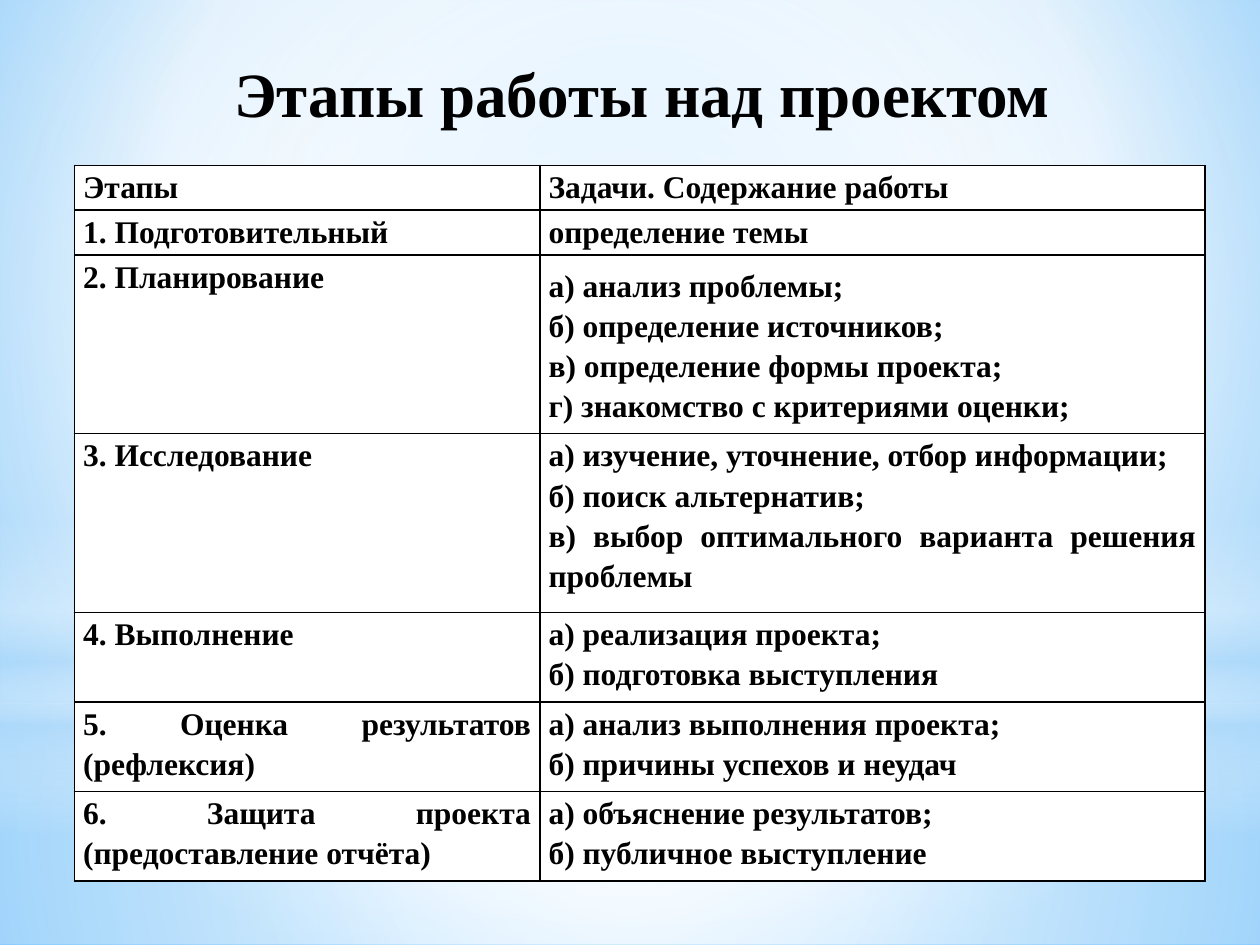
"""Build a slide with a table of project stages on a soft blue backdrop."""
from pptx import Presentation
from pptx.dml.color import RGBColor
from pptx.enum.shapes import MSO_SHAPE
from pptx.enum.text import MSO_ANCHOR, PP_ALIGN
from pptx.oxml import parse_xml
from pptx.oxml.ns import nsdecls, qn
from pptx.util import Pt

RECT, OVAL = MSO_SHAPE.RECTANGLE, MSO_SHAPE.OVAL
TOP, MIDDLE = MSO_ANCHOR.TOP, MSO_ANCHOR.MIDDLE
CENTER, JUSTIFY = PP_ALIGN.CENTER, PP_ALIGN.JUSTIFY

THEME = {
    "font": "Times New Roman", "ink": "000000", "paper": "FFFFFF",
    "haze": "B4DCFA", "sky": "9ED5FF", "deep": "5BB9FF",
    "title": 36, "body": 18, "rule": 1,
}
PAPER, HAZE = THEME["paper"], THEME["haze"]

TITLE = "Этапы работы над проектом"
STAGES = [
    ("Этапы", ["Задачи. Содержание работы"]),
    ("1. Подготовительный", ["определение темы"]),
    ("2. Планирование", [
        "а) анализ проблемы;",
        "б) определение источников;",
        "в) определение формы проекта;",
        "г) знакомство с критериями оценки;"]),
    ("3. Исследование", [
        "а) изучение, уточнение, отбор информации;",
        "б) поиск альтернатив;",
        "в) выбор оптимального варианта решения проблемы"]),
    ("4. Выполнение", ["а) реализация проекта;", "б) подготовка выступления"]),
    ("5. Оценка результатов (рефлексия)", [
        "а) анализ выполнения проекта;", "б) причины успехов и неудач"]),
    ("6. Защита проекта (предоставление отчёта)", [
        "а) объяснение результатов;", "б) публичное выступление"]),
]
LINES = [1, 1, 4, 4, 2, 2, 2]
CENTRED = (2, 1)

WIDE, HIGH = 720, 540
LEFT, HEAD = 42.5, 94.5
COLS = [266, 380]
LINE = 25.56
INSET = 5

ROUND = '<a:path path="circle"><a:fillToRect l="{}000" t="{}000" r="{}000" b="{}000"/></a:path>'
MID = ROUND.format(50, 50, 50, 50)
DOWN = '<a:lin ang="5400000" scaled="0"/>'
SKY = [(0, THEME["sky"], 100), (60, PAPER, 100), (100, THEME["deep"], 100)]
GLOWS = [
    (RECT, 402, 138, [(0, PAPER, 91), (37, PAPER, 76), (100, HAZE, 79)], MID),
    (RECT, 0, 402, [(0, PAPER, 89), (48, PAPER, 62), (100, HAZE, 79)], MID),
    (RECT, 297, 180, [(0, PAPER, 0), (29, PAPER, 30), (45, HAZE, 40),
                      (55, PAPER, 26), (65, HAZE, 60), (100, PAPER, 0)], DOWN),
    (OVAL, 126, 402, [(0, PAPER, 100), (56, PAPER, 0)], MID),
]


def blend(fill, root, stops, shade):
    fill.gradient()
    old = root.find(".//" + qn("a:gradFill"))
    marks = "".join(
        f'<a:gs pos="{pos}000"><a:srgbClr val="{tone}"><a:alpha val="{alpha}000"/>'
        f"</a:srgbClr></a:gs>" for pos, tone, alpha in stops)
    new = parse_xml(f'<a:gradFill {nsdecls("a")} rotWithShape="1">'
                    f"<a:gsLst>{marks}</a:gsLst>{shade}</a:gradFill>")
    old.getparent().replace(old, new)


def style(para, size, align):
    para.alignment = align
    font = para.font
    font.name, font.size, font.bold = THEME["font"], Pt(size), True
    font.color.rgb = RGBColor.from_string(THEME["ink"])


def paint(slide):
    blend(slide.background.fill, slide.element, SKY, ROUND.format(20, 10, 20, 60))
    for kind, top, high, stops, shade in GLOWS:
        glow = slide.shapes.add_shape(kind, 0, Pt(top), Pt(WIDE), Pt(high))
        glow.shadow.inherit = False
        glow.line.fill.background()
        blend(glow.fill, glow.element, stops, shade)


def fill_cell(cell, lines, anchor):
    cell.margin_left = cell.margin_right = Pt(INSET)
    cell.margin_top = cell.margin_bottom = 0
    cell.vertical_anchor = anchor
    cell.text = "\n".join(lines)
    for para in cell.text_frame.paragraphs:
        style(para, THEME["body"], JUSTIFY)
        para.line_spacing = 1.15
    cell.fill.solid()
    cell.fill.fore_color.rgb = RGBColor.from_string(PAPER)
    props = cell._tc.get_or_add_tcPr()
    for spot, side in enumerate("LRTB"):
        props.insert(spot, parse_xml(
            f'<a:ln{side} {nsdecls("a")} w="{Pt(THEME["rule"])}"><a:solidFill>'
            f'<a:srgbClr val="{THEME["ink"]}"/></a:solidFill></a:ln{side}>'))


def add_stages(slide):
    table = slide.shapes.add_table(
        len(STAGES), len(COLS), Pt(LEFT), Pt(HEAD),
        Pt(sum(COLS)), Pt(LINE * sum(LINES))).table
    table.first_row = table.horz_banding = False
    for col, wide in zip(table.columns, COLS):
        col.width = Pt(wide)
    for r, (stage, tasks) in enumerate(STAGES):
        table.rows[r].height = Pt(LINE * LINES[r])
        for c, lines in enumerate(([stage], tasks)):
            fill_cell(table.cell(r, c), lines, MIDDLE if (r, c) == CENTRED else TOP)


def add_title(slide):
    title = slide.shapes.title
    title.left, title.top, title.width, title.height = map(Pt, (124.5, 27.5, 485, 51))
    frame = title.text_frame
    frame.text = TITLE
    frame.word_wrap = False
    frame.vertical_anchor = MIDDLE
    style(frame.paragraphs[0], THEME["title"], CENTER)
    slide.shapes.element.append(title.element)


def main():
    deck = Presentation()
    deck.slide_width, deck.slide_height = Pt(WIDE), Pt(HIGH)
    slide = deck.slides.add_slide(deck.slide_layouts[5])
    paint(slide)
    add_stages(slide)
    add_title(slide)
    deck.save("out.pptx")


if __name__ == "__main__":
    main()
